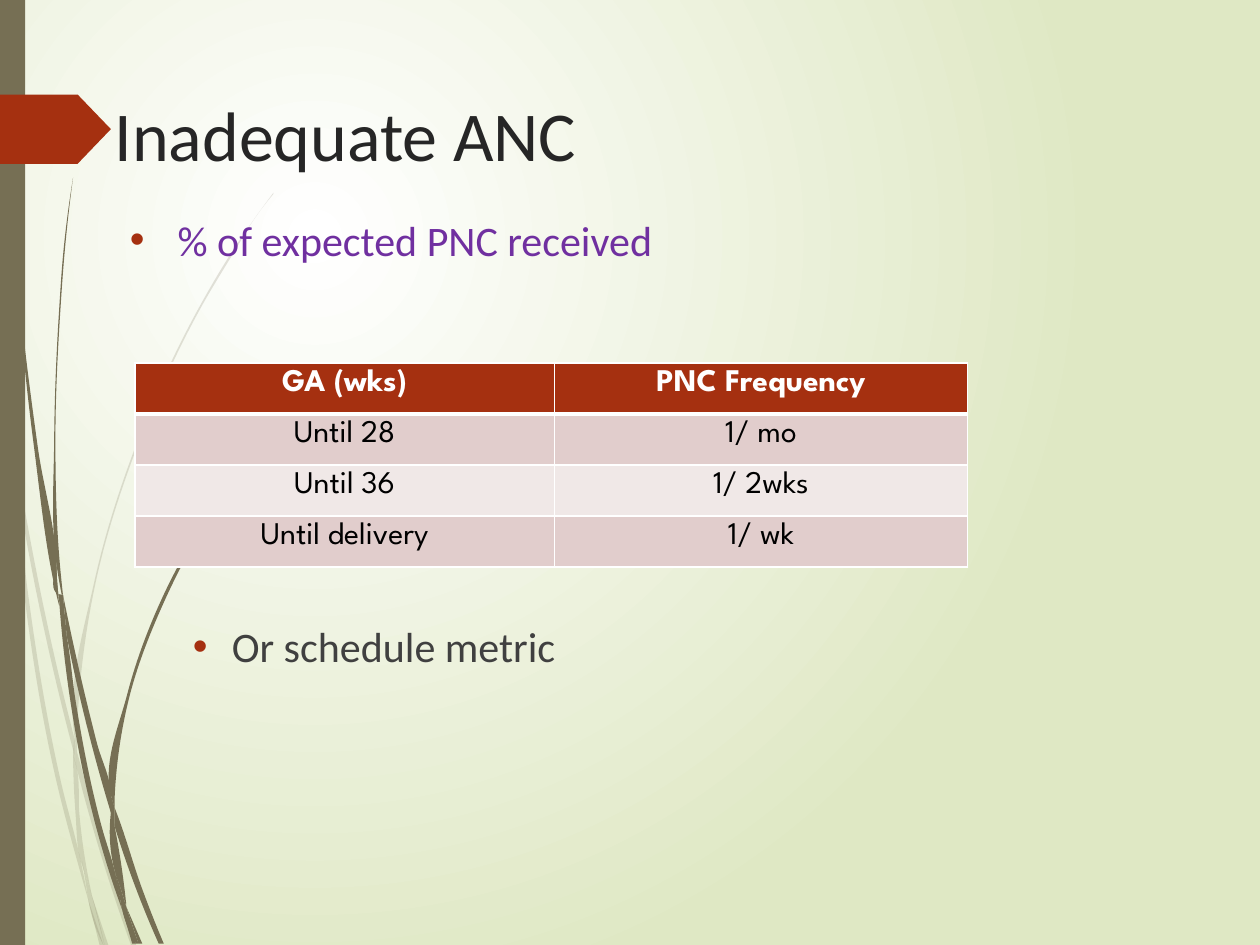
from dataclasses import dataclass
from math import dist

from lxml.etree import SubElement
from pptx import Presentation
from pptx.dml.color import RGBColor
from pptx.enum.shapes import MSO_SHAPE
from pptx.enum.text import MSO_ANCHOR, MSO_AUTO_SIZE, PP_ALIGN
from pptx.oxml.ns import qn
from pptx.util import Inches, Pt

Point = tuple[float, float]
Edge = tuple[Point, ...]


@dataclass(frozen=True)
class Theme:
    olive: str = "766F54"
    rust: str = "A53010"
    white: str = "FFFFFF"
    black: str = "000000"
    backdrop: str = "DFE8C4"
    title: str = "262626"
    body: str = "404040"
    accent: str = "7030A0"
    bands: tuple[str, str] = ("E1CDCC", "F0E8E7")
    text_font: str = "Calibri"
    table_font: str = "League Spartan"
    title_size: int = 40
    body_size: int = 24
    table_size: int = 18


@dataclass(frozen=True)
class Wisp:
    left: Edge
    right: Edge


@dataclass(frozen=True)
class Bullet:
    text: str
    color: str
    level: int
    margin: float
    hanging: float
    before: float


THEME = Theme()

FAINT_WISPS = (
    Wisp(((0.08, 3.5), (0.06, 3.22), (0, 2.82)), ((0, 2.99), (0.07, 3.44), (0.08, 3.5))),
    Wisp(((0.12, 3.76), (0.4, 5.22), (0.59, 5.99)), ((0.59, 5.86), (0.43, 5.2), (0.1, 3.45))),
    Wisp(((0.61, 6.1), (0.85, 6.94), (1.04, 7.5)),
         ((1.08, 7.5), (0.88, 6.92), (0.64, 6.07), (0.61, 5.96))),
    Wisp(((0.73, 7.11), (0.83, 7.5)), ((0.86, 7.5), (0.73, 7.11))),
    Wisp(((0.7, 7.14), (0.64, 6.83), (0.48, 6.19), (0.22, 4.69), (0.12, 3.76), (0.08, 3.5)),
         ((0.08, 3.5), (0.19, 4.7), (0.45, 6.21), (0.64, 6.93), (0.7, 7.14))),
    Wisp(((0.58, 5.99), (0.6, 6.46), (0.64, 6.83), (0.67, 6.92), (0.73, 7.11)),
         ((0.72, 7.06), (0.63, 6.46), (0.61, 6.1), (0.58, 5.99))),
    Wisp(((0.61, 5.84), (0.76, 4.62), (1.11, 3.49), (1.59, 2.45), (1.87, 1.98), (2.01, 1.75), (2.17, 1.54)),
         ((2.17, 1.53), (2.01, 1.75), (1.86, 1.97), (1.58, 2.44), (1.1, 3.48), (0.75, 4.61),
          (0.59, 5.84), (0.61, 5.96))),
    Wisp(((0.7, 7.14), (0.79, 7.5)), ((0.82, 7.5), (0.7, 7.14))),
    Wisp(((0.61, 6.1), (0.61, 5.96)), ((0.59, 5.86), (0.58, 5.99))),
    Wisp(((0.65, 6.83), (0.69, 7.07), (0.7, 7.14), (0.82, 7.5)),
         ((0.83, 7.5), (0.73, 7.11), (0.67, 6.92), (0.65, 6.83))),
)
DARK_WISPS = (
    Wisp(((0.02, 0), (0.03, 0.48), (0.05, 1.1), (0.14, 2.33), (0.27, 3.55), (0.46, 4.77), (0.47, 4.81)),
         ((0.45, 4.57), (0.45, 4.53), (0.3, 3.55), (0.15, 2.32), (0.06, 1.09), (0.04, 0.48), (0.03, 0))),
    Wisp(((0.53, 5.05), (0.73, 5.92), (0.88, 6.45)),
         ((0.88, 6.33), (0.88, 6.31), (0.77, 5.9), (0.5, 4.72))),
    Wisp(((0.91, 6.56), (1.09, 7.08), (1.26, 7.49)),
         ((1.3, 7.49), (1.13, 7.06), (0.94, 6.49), (0.91, 6.41))),
    Wisp(((0.47, 4.77), (0.56, 5.57), (0.77, 6.59), (0.92, 7.08), (0.97, 7.22)),
         ((0.96, 7.17), (0.91, 6.91), (0.81, 6.57), (0.6, 5.56), (0.53, 5.05), (0.47, 4.77))),
    Wisp(((0.5, 4.72), (0.48, 4.53), (0.44, 3.49), (0.48, 2.45), (0.52, 1.93), (0.58, 1.41)),
         ((0.58, 1.41), (0.51, 1.93), (0.47, 2.45), (0.43, 3.49), (0.45, 4.49), (0.49, 4.72))),
    Wisp(((1, 7.19), (1.1, 7.49)), ((1.13, 7.49), (1, 7.19))),
    Wisp(((0.45, 4.49), (0.45, 4.53), (0.47, 4.77), (0.53, 5.05)),
         ((0.5, 4.72), (0.49, 4.72), (0.45, 4.49))),
    Wisp(((0.91, 6.33), (1.03, 5.52), (1.31, 4.76), (1.69, 4.06), (1.91, 3.74), (2.03, 3.59), (2.16, 3.44)),
         ((2.15, 3.44), (2.03, 3.58), (1.91, 3.73), (1.68, 4.05), (1.29, 4.74), (1.01, 5.51),
          (0.88, 6.31), (0.91, 6.41))),
    Wisp(((0.97, 7.22), (1.05, 7.49)), ((1.08, 7.49), (0.97, 7.22))),
    Wisp(((0.88, 6.45), (0.91, 6.91), (0.96, 7.06), (1, 7.19)),
         ((1, 7.16), (0.91, 6.56), (0.9, 6.51), (0.88, 6.45))),
    Wisp(((0.88, 6.31), (0.88, 6.45), (0.91, 6.56)), ((0.91, 6.41), (0.88, 6.31))),
    Wisp(((0.91, 6.91), (0.96, 7.17), (0.97, 7.22), (1.08, 7.49)),
         ((1.1, 7.49), (1, 7.19), (0.96, 7.06), (0.91, 6.91))),
)
BULLETS = (
    Bullet("% of expected PNC received", THEME.accent, 0, 0.38, 0.38, 10),
    Bullet("Or schedule metric", THEME.body, 1, 0.81, 0.31, 203.5),
)
SCHEDULE = (
    ("GA (wks)", "PNC Frequency"),
    ("Until 28", "1/ mo"),
    ("Until 36", "1/ 2wks"),
    ("Until delivery", "1/ wk"),
)


def curve_handles(edge: Edge) -> list[tuple[Point, Point]]:
    chords = [dist(a, b) for a, b in zip(edge, edge[1:])]
    units = [((b[0] - a[0]) / h, (b[1] - a[1]) / h) for a, b, h in zip(edge, edge[1:], chords)]
    inner = [tuple((d * k + e * h) / (h + k) for d, e in zip(before, after))
             for before, after, h, k in zip(units, units[1:], chords, chords[1:])]
    first, last = (inner[0], inner[-1]) if inner else (units[0], units[0])
    slopes = [tuple(2 * d - s for d, s in zip(units[0], first)), *inner,
              tuple(2 * d - s for d, s in zip(units[-1], last))]
    return [(tuple(p + s * h / 3 for p, s in zip(a, m)), tuple(p - s * h / 3 for p, s in zip(b, n)))
            for a, b, m, n, h in zip(edge, edge[1:], slopes, slopes[1:], chords)]


def paint(shape, color: str, alpha: int = 100) -> None:
    shape.shadow.inherit = False
    shape.line.fill.background()
    shape.fill.solid()
    shape.fill.fore_color.rgb = RGBColor.from_string(color)
    if alpha < 100:
        tone = shape.fill._xPr.find(".//" + qn("a:srgbClr"))
        SubElement(tone, qn("a:alpha"), val=str(alpha * 1000))


def draw_wisp(page, wisp: Wisp, alpha: int) -> None:
    outline = [(Inches(x), Inches(y)) for x, y in wisp.left + wisp.right]
    builder = page.shapes.build_freeform(*outline[0], scale=1.0)
    builder.add_line_segments(outline[1:], close=True)
    shape = builder.convert_to_shape()
    lines = shape._element.findall(".//" + qn("a:lnTo"))
    handles = [*curve_handles(wisp.left), None, *curve_handles(wisp.right)]
    for line, pair in zip(lines, handles):
        if pair:
            tip = line[0]
            line.tag = qn("a:cubicBezTo")
            for x, y in pair:
                SubElement(line, qn("a:pt"), x=str(Inches(x) - shape.left), y=str(Inches(y) - shape.top))
            line.append(tip)
    paint(shape, THEME.olive, alpha)


def draw_block(page, kind, left: float, top: float, width: float, height: float, color: str):
    shape = page.shapes.add_shape(kind, Inches(left), Inches(top), Inches(width), Inches(height))
    paint(shape, color)
    return shape


def write(para, text: str, *, font: str, size: int, color: str, bold: bool = False,
          align=PP_ALIGN.LEFT) -> None:
    para.alignment = align
    span = para.add_run()
    span.text = text
    span.font.name, span.font.size, span.font.bold = font, Pt(size), bold
    span.font.color.rgb = RGBColor.from_string(color)


def place(page, box, left: float, top: float, width: float, height: float):
    box.left, box.top, box.width, box.height = map(Inches, (left, top, width, height))
    page.shapes._spTree.append(box._element)
    frame = box.text_frame
    frame.word_wrap = True
    frame.auto_size = MSO_AUTO_SIZE.NONE
    frame.vertical_anchor = MSO_ANCHOR.TOP
    return frame


def add_bullet(para, bullet: Bullet) -> None:
    para.level = bullet.level
    para.space_before = Pt(bullet.before)
    write(para, bullet.text, font=THEME.text_font, size=THEME.body_size, color=bullet.color)
    props = para._p.get_or_add_pPr()
    props.set("marL", str(Inches(bullet.margin)))
    props.set("indent", str(-Inches(bullet.hanging)))
    SubElement(SubElement(props, qn("a:buClr")), qn("a:srgbClr"), val=THEME.rust)
    SubElement(props, qn("a:buFont"), typeface="Arial")
    SubElement(props, qn("a:buChar"), char="•")


def border_cell(cell, widths: dict[str, int]) -> None:
    props = cell._tc.get_or_add_tcPr()
    for side, width in widths.items():
        line = SubElement(props, qn(f"a:ln{side}"), w=str(Pt(width)))
        SubElement(SubElement(line, qn("a:solidFill")), qn("a:srgbClr"), val=THEME.white)


def draw_schedule(page) -> None:
    table = page.shapes.add_table(len(SCHEDULE), 2, Inches(1.07), Inches(2.88),
                                  Inches(6.61), Inches(1.62)).table
    table.horz_banding = False
    for column, width in zip(table.columns, (3.33, 3.28)):
        column.width = Inches(width)
    for r, row in enumerate(SCHEDULE):
        header = r == 0
        for c, text in enumerate(row):
            cell = table.cell(r, c)
            border_cell(cell, {"L": 1, "R": 1, "T": 3 if r == 1 else 1, "B": 3 if header else 1})
            cell.fill.solid()
            cell.fill.fore_color.rgb = RGBColor.from_string(
                THEME.rust if header else THEME.bands[(r - 1) % 2])
            write(cell.text_frame.paragraphs[0], text, font=THEME.table_font, size=THEME.table_size,
                  color=THEME.white if header else THEME.black, bold=header, align=PP_ALIGN.CENTER)


def fill_background(page) -> None:
    fill = page.background.fill
    fill.gradient()
    for stop, color in zip(fill.gradient_stops, (THEME.white, THEME.backdrop)):
        stop.color.rgb = RGBColor.from_string(color)
    gradient = page.element.find(".//" + qn("a:gradFill"))
    gradient.remove(gradient.find(qn("a:lin")))
    radial = SubElement(gradient, qn("a:path"), {"path": "circle"})
    SubElement(radial, qn("a:fillToRect"), l="50000", t="50000", r="100000", b="100000")


def main() -> None:
    deck = Presentation()
    deck.slide_width, deck.slide_height = Inches(10), Inches(7.5)
    page = deck.slides.add_slide(deck.slide_layouts[1])
    fill_background(page)
    for wisps, alpha in ((FAINT_WISPS, 20), (DARK_WISPS, 100)):
        for wisp in wisps:
            draw_wisp(page, wisp, alpha)
    draw_block(page, MSO_SHAPE.RECTANGLE, 0, 0, 0.2, 7.5, THEME.olive)
    arrow = draw_block(page, MSO_SHAPE.PENTAGON, 0, 0.75, 0.88, 0.55, THEME.rust)
    arrow.adjustments[0] = 0.48
    title = place(page, page.shapes.title, 0.81, 0.68, 9.07, 1.33)
    write(title.paragraphs[0], "Inadequate ANC", font=THEME.text_font,
          size=THEME.title_size, color=THEME.title)
    body = place(page, page.placeholders[1], 0.93, 1.65, 8.82, 5.66)
    for index, bullet in enumerate(BULLETS):
        add_bullet(body.add_paragraph() if index else body.paragraphs[0], bullet)
    draw_schedule(page)
    deck.save("out.pptx")


if __name__ == "__main__":
    main()
